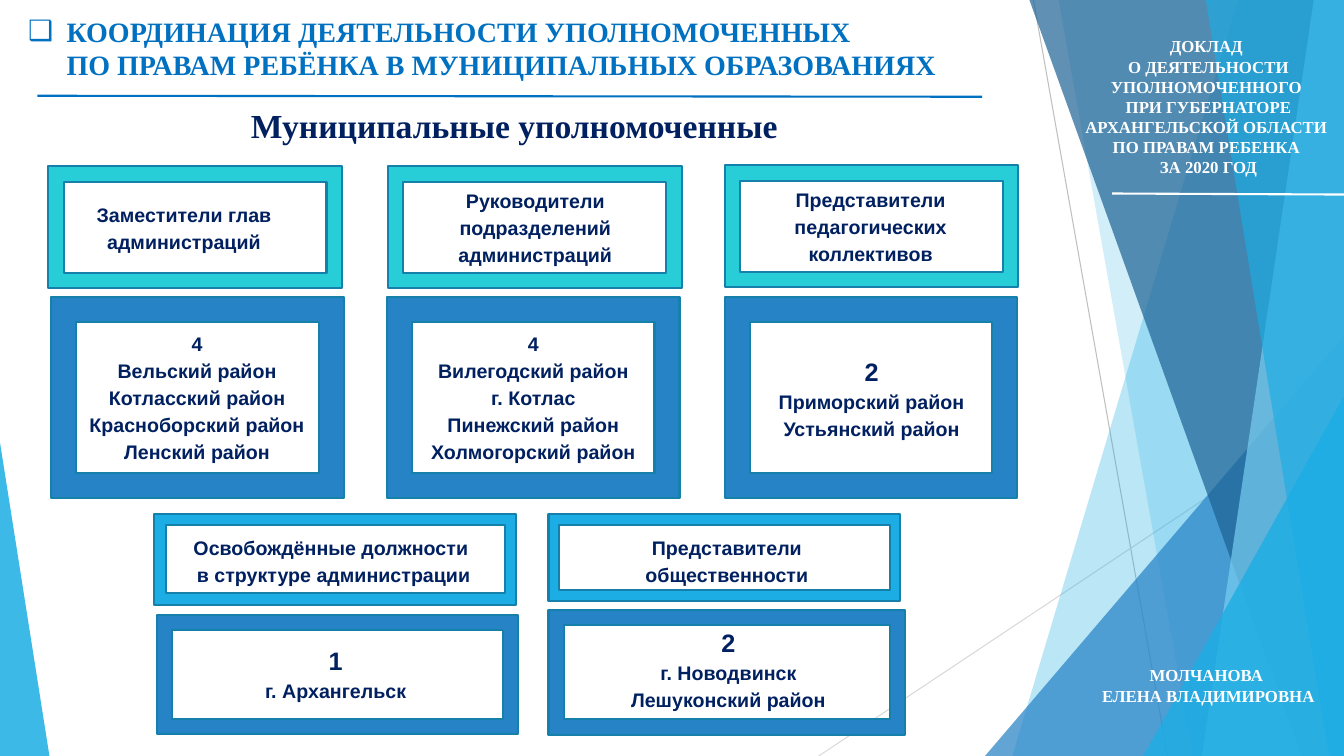
import pptx
import pptx.util
import pptx.dml.color
import pptx.enum.shapes
import pptx.enum.text
import pptx.oxml.ns
import lxml.etree

RGB = pptx.dml.color.RGBColor
KIND = pptx.enum.shapes.MSO_SHAPE
ALIGN = pptx.enum.text.PP_ALIGN
FIT = pptx.enum.text.MSO_AUTO_SIZE
TOP = pptx.enum.text.MSO_ANCHOR.TOP
QN = pptx.oxml.ns.qn

PX = 9144  # 100 px to the inch
WIDE, HIGH = 1333, 750

WHITE = RGB(0xFF, 0xFF, 0xFF)
GREY = RGB(0xBF, 0xBF, 0xBF)
PALE = RGB(0xD9, 0xD9, 0xD9)
SKY = RGB(0x1C, 0xAD, 0xE4)
LIGHT = RGB(0x77, 0xCE, 0xEF)
BLUE = RGB(0x26, 0x83, 0xC6)
DEEP = RGB(0x1D, 0x62, 0x94)
TEAL = RGB(0x27, 0xCE, 0xD7)
EDGE = RGB(0x15, 0x80, 0xA9)
NAVY = RGB(0x00, 0x20, 0x60)
HEAD = RGB(0x00, 0x70, 0xC0)

SERIF, SANS = "Times New Roman", "Arial"

TITLE = ("КООРДИНАЦИЯ ДЕЯТЕЛЬНОСТИ УПОЛНОМОЧЕННЫХ \n"
         "ПО ПРАВАМ РЕБЁНКА В МУНИЦИПАЛЬНЫХ ОБРАЗОВАНИЯХ")
REPORT = ("ДОКЛАД \nО ДЕЯТЕЛЬНОСТИ УПОЛНОМОЧЕННОГО \n"
          "ПРИ ГУБЕРНАТОРЕ АРХАНГЕЛЬСКОЙ ОБЛАСТИ \n"
          "ПО ПРАВАМ РЕБЕНКА \nЗА 2020 ГОД")
AUTHOR = "МОЛЧАНОВА \nЕЛЕНА ВЛАДИМИРОВНА"

# start, end, colour, width in points
RAYS = [((1025, 0), (1158, HIGH), GREY, 0.75),
        ((WIDE, 403), (812, HIGH), PALE, 0.75)]
RULES = [((1103, 192), (WIDE, 193), WHITE, 1.5),
         ((37, 95), (974, 96), HEAD, 1.5)]

# Bands reach the right edge: x at top, x at foot, colour, opacity in %
# Wedges stand on the foot: left, top, width, apex, colour, opacity in %
DECOR = [("band", 1228, 1004, SKY, 30),
         ("band", 1050, 1183, SKY, 20),
         ("wedge", 977, 333, 356, 1, BLUE, 72),
         ("band", 1021, 1291, DEEP, 70),
         ("band", 1303, 1192, LIGHT, 70),
         ("band", 1196, 1318, SKY, 65),
         ("wedge", 1134, 393, 199, 1, SKY, 80),
         ("wedge", 0, 439, 49, 0, SKY, 85)]

# frame box, frame colour, text box, size of first line, lines
CARDS = [
    ((48, 165, 291, 121), TEAL, (50, 193, 265, 64), 14,
     ["Заместители глав администраций"]),
    ((385, 165, 291, 121), TEAL, (404, 179, 254, 91), 14,
     ["Руководители подразделений", "администраций"]),
    ((719, 164, 291, 121), TEAL, (731, 178, 265, 91), 14,
     ["Представители педагогических коллективов"]),
    ((51, 295, 290, 199), BLUE, (69, 321, 253, 146), 14,
     ["4", "Вельский район", "Котласский район", "Красноборский район",
      "Ленский район"]),
    ((384, 295, 290, 199), BLUE, (403, 321, 252, 146), 14,
     ["4", "Вилегодский район", "г. Котлас", "Пинежский район",
      "Холмогорский район"]),
    ((719, 295, 290, 199), BLUE, (742, 344, 245, 99), 18,
     ["2", "Приморский район", "Устьянский район"]),
    ((153, 510, 359, 90), SKY, (166, 523, 330, 64), 14,
     ["Освобождённые должности \nв структуре администрации"]),
    ((544, 510, 349, 86), SKY, (611, 523, 220, 64), 14,
     ["Представители общественности"]),
    ((156, 610, 358, 118), BLUE, (218, 631, 230, 72), 18,
     ["1", "г. Архангельск"]),
    ((544, 605, 354, 124), BLUE, (593, 613, 259, 99), 18,
     ["2", "г. Новодвинск", "Лешуконский район"]),
]


def emu(*nums):
    return [pptx.util.Emu(num * PX) for num in nums]


def assign(item, **vals):
    for name, val in vals.items():
        setattr(item, name, val)


def paint(shape, color, alpha=100, edge=None):
    """Fill a shape, with an opacity in percent and an optional outline."""
    shape.shadow.inherit = False
    shape.fill.solid()
    shape.fill.fore_color.rgb = color
    if alpha < 100:
        tone = shape.fill._xPr.find(QN("a:solidFill"))[0]
        lxml.etree.SubElement(tone, QN("a:alpha"), val=str(alpha * 1000))
    if edge is None:
        shape.line.fill.background()
    else:
        shape.line.color.rgb = edge
        shape.line.width = pptx.util.Pt(1.5)


def draw_line(shapes, start, end, color, width):
    line = shapes.add_connector(
        pptx.enum.shapes.MSO_CONNECTOR.STRAIGHT, *emu(*start, *end))
    line.line.color.rgb = color
    line.line.width = pptx.util.Pt(width)
    props = line._element.spPr
    lxml.etree.SubElement(props, QN("a:effectLst"))


def draw_band(shapes, top, foot, color, alpha):
    path = shapes.build_freeform(top, 0, scale=PX)
    path.add_line_segments([(WIDE, 0), (WIDE, HIGH), (foot, HIGH)])
    paint(path.convert_to_shape(), color, alpha)


def draw_wedge(shapes, left, top, width, apex, color, alpha):
    wedge = shapes.add_shape(KIND.ISOSCELES_TRIANGLE,
                             *emu(left, top, width, HIGH - top))
    wedge.adjustments[0] = apex
    paint(wedge, color, alpha)


def write(frame, lines, sizes, font, color, align, space=1.0):
    assign(frame, word_wrap=True, auto_size=FIT.NONE, vertical_anchor=TOP)
    for num, (line, size) in enumerate(zip(lines, sizes)):
        para = frame.add_paragraph() if num else frame.paragraphs[0]
        para.text = line
        assign(para, alignment=align, line_spacing=space)
        for run in para.runs:
            assign(run.font, name=font, size=pptx.util.Pt(size), bold=True)
            run.font.color.rgb = color


def add_text(shapes, box, *style):
    write(shapes.add_textbox(*emu(*box)).text_frame, *style)


def set_title(title):
    left, top, width, height = emu(18, 9, 937, 77)
    assign(title, left=left, top=top, width=width, height=height)
    write(title.text_frame, [TITLE], [20], SERIF, HEAD, ALIGN.LEFT)
    props = title.text_frame.paragraphs[0]._p.get_or_add_pPr()
    props.set("marL", str(38 * PX))
    props.set("indent", str(-38 * PX))
    lxml.etree.SubElement(props, QN("a:buFont"), typeface=SANS)
    lxml.etree.SubElement(props, QN("a:buChar"), char="❑")


def main():
    deck = pptx.Presentation()
    deck.slide_width, deck.slide_height = emu(WIDE, HIGH)
    slide = deck.slides.add_slide(deck.slide_layouts[5])
    shapes = slide.shapes
    set_title(shapes.title)

    for ray in RAYS:
        draw_line(shapes, *ray)
    tools = {"band": draw_band, "wedge": draw_wedge}
    for kind, *form in DECOR:
        tools[kind](shapes, *form)
    for rule in RULES:
        draw_line(shapes, *rule)

    for box, text in [((1064, 31, 269, 151), REPORT),
                      ((1064, 655, 269, 51), AUTHOR)]:
        add_text(shapes, box, [text], [12], SERIF, WHITE, ALIGN.CENTER)
    add_text(shapes, (239, 99, 546, 50), ["Муниципальные уполномоченные"],
             [24], SERIF, NAVY, ALIGN.LEFT)

    for box, color, area, first, lines in CARDS:
        paint(shapes.add_shape(KIND.FRAME, *emu(*box)), color, edge=EDGE)
        sizes = [first] + [14] * (len(lines) - 1)
        add_text(shapes, area, lines, sizes, SANS, NAVY, ALIGN.CENTER, 1.15)

    deck.save("out.pptx")


if __name__ == "__main__":
    main()
